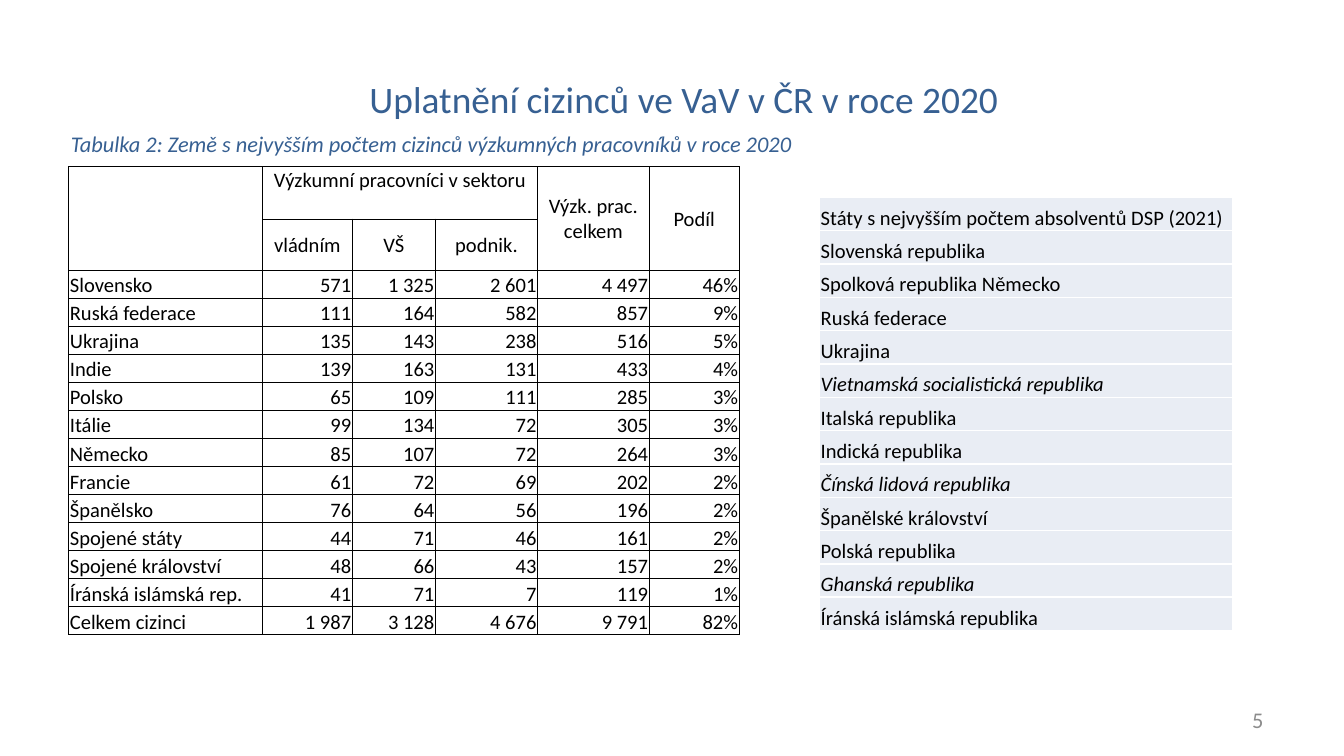
from lxml.etree import SubElement
from pptx import Presentation
from pptx.dml.color import RGBColor
from pptx.enum.text import MSO_ANCHOR, PP_ALIGN
from pptx.oxml.ns import qn
from pptx.util import Cm, Pt

COLORS = {
    "heading": "376092",
    "text": "000000",
    "number": "8C8C8C",
    "band": "E9EDF4",
    "grid": "000000",
    "gap": "FFFFFF",
}
FONT = "Calibri"

SECTOR_COLUMNS = [3.66, 1.7, 1.57, 1.93, 2.11, 1.7]
SECTOR_HEADER_ROWS = [0.99, 0.97]
SECTOR_ROW = 0.53
# first row, column, last row, column, wording, anchor
SECTOR_HEADERS = [
    (0, 0, 1, 0, "", MSO_ANCHOR.MIDDLE),
    (0, 1, 0, 3, "Výzkumní pracovníci v sektoru", MSO_ANCHOR.TOP),
    (0, 4, 1, 4, "Výzk. prac. celkem", MSO_ANCHOR.MIDDLE),
    (0, 5, 1, 5, "Podíl", MSO_ANCHOR.MIDDLE),
    (1, 1, 1, 1, "vládním", MSO_ANCHOR.MIDDLE),
    (1, 2, 1, 2, "VŠ", MSO_ANCHOR.MIDDLE),
    (1, 3, 1, 3, "podnik.", MSO_ANCHOR.MIDDLE),
]
SECTOR_DATA = [
    ("Slovensko", "571", "1 325", "2 601", "4 497", "46%"),
    ("Ruská federace", "111", "164", "582", "857", "9%"),
    ("Ukrajina", "135", "143", "238", "516", "5%"),
    ("Indie", "139", "163", "131", "433", "4%"),
    ("Polsko", "65", "109", "111", "285", "3%"),
    ("Itálie", "99", "134", "72", "305", "3%"),
    ("Německo", "85", "107", "72", "264", "3%"),
    ("Francie", "61", "72", "69", "202", "2%"),
    ("Španělsko", "76", "64", "56", "196", "2%"),
    ("Spojené státy", "44", "71", "46", "161", "2%"),
    ("Spojené království", "48", "66", "43", "157", "2%"),
    ("Íránská islámská rep.", "41", "71", "7", "119", "1%"),
    ("Celkem cizinci", "1 987", "3 128", "4 676", "9 791", "82%"),
]

GRADUATE_ROW = 0.63
GRADUATE_STATES = [
    "Státy s nejvyšším počtem absolventů DSP (2021)",
    "Slovenská republika",
    "Spolková republika Německo",
    "Ruská federace",
    "Ukrajina",
    "Vietnamská socialistická republika",
    "Italská republika",
    "Indická republika",
    "Čínská lidová republika",
    "Španělské království",
    "Polská republika",
    "Ghanská republika",
    "Íránská islámská republika",
]
ITALIC_STATES = {
    "Vietnamská socialistická republika",
    "Čínská lidová republika",
    "Ghanská republika",
}


def set_attributes(target, values):
    for name, value in values.items():
        setattr(target, name, value)


def write(tf, text, size, color, align=PP_ALIGN.LEFT, italic=False):
    p = tf.paragraphs[0]
    p.alignment = align
    r = p.add_run()
    r.text = text
    set_attributes(r.font, {"name": FONT, "size": Pt(size), "italic": italic})
    r.font.color.rgb = RGBColor.from_string(COLORS[color])


def add_text(s, box, text, size, color, anchor=MSO_ANCHOR.MIDDLE, **style):
    tf = s.shapes.add_textbox(*map(Cm, box)).text_frame
    set_attributes(tf, {"word_wrap": True, "vertical_anchor": anchor})
    write(tf, text, size, color, **style)


def set_borders(cell, color, width):
    """Insert the border lines ahead of the fill, as the schema requires."""
    tc_pr = cell._tc.get_or_add_tcPr()
    for i, side in enumerate(("lnL", "lnR", "lnT", "lnB")):
        ln = SubElement(tc_pr, qn(f"a:{side}"), w=str(Pt(width)))
        fill = SubElement(ln, qn("a:solidFill"))
        SubElement(fill, qn("a:srgbClr"), val=COLORS[color])
        tc_pr.insert(i, ln)


def add_grid(s, left, top, columns, rows, border, width, fill=None):
    """Add an unstyled table with uniform borders, margins and fill."""
    frame = s.shapes.add_table(len(rows), len(columns), Cm(left), Cm(top),
                               Cm(sum(columns)), Cm(sum(rows)))
    table = frame.table
    set_attributes(table, {"first_row": False, "horz_banding": False})
    for column, size in zip(table.columns, columns):
        column.width = Cm(size)
    for row, size in zip(table.rows, rows):
        row.height = Cm(size)
    for cell in table.iter_cells():
        set_attributes(cell, {
            "margin_left": Cm(0.02), "margin_right": Cm(0.02),
            "margin_top": Cm(0.02), "margin_bottom": 0,
            "vertical_anchor": MSO_ANCHOR.BOTTOM,
        })
        if fill:
            cell.fill.solid()
            cell.fill.fore_color.rgb = RGBColor.from_string(COLORS[fill])
        else:
            cell.fill.background()
        set_borders(cell, border, width)
    return table


def add_sector_table(s):
    rows = SECTOR_HEADER_ROWS + [SECTOR_ROW] * len(SECTOR_DATA)
    table = add_grid(s, 1.3, 3.15, SECTOR_COLUMNS, rows, "grid", 0.5)
    for row, col, last_row, last_col, text, anchor in SECTOR_HEADERS:
        cell = table.cell(row, col)
        if (row, col) != (last_row, last_col):
            cell.merge(table.cell(last_row, last_col))
        cell.vertical_anchor = anchor
        if text:
            write(cell.text_frame, text, 11, "text", PP_ALIGN.CENTER)
    for i, record in enumerate(SECTOR_DATA, len(SECTOR_HEADER_ROWS)):
        for j, text in enumerate(record):
            align = PP_ALIGN.RIGHT if j else PP_ALIGN.LEFT
            write(table.cell(i, j).text_frame, text, 11, "text", align)


def add_graduate_table(s):
    rows = [GRADUATE_ROW] * len(GRADUATE_STATES)
    table = add_grid(s, 15.49, 3.73, [7.8], rows, "gap", 1, "band")
    for i, state in enumerate(GRADUATE_STATES):
        write(table.cell(i, 0).text_frame, state, 11, "text",
              italic=state in ITALIC_STATES)


def main():
    prs = Presentation()
    prs.slide_width, prs.slide_height = Cm(25.4), Cm(14.29)
    s = prs.slides.add_slide(prs.slide_layouts[6])
    add_text(s, (1.5, 0.97, 22.86, 1.78),
             "Uplatnění cizinců ve VaV v ČR v roce 2020", 20, "heading",
             align=PP_ALIGN.CENTER)
    add_text(s, (18.21, 13.23, 5.92, 0.76), "5", 12, "number",
             align=PP_ALIGN.RIGHT)
    add_graduate_table(s)
    add_text(s, (1.09, 2.34, 14.6, 0.76),
             "Tabulka 2: Země s nejvyšším počtem cizinců výzkumných "
             "pracovníků v roce 2020", 12, "heading", MSO_ANCHOR.TOP,
             italic=True)
    add_sector_table(s)
    prs.save("out.pptx")


if __name__ == "__main__":
    main()
